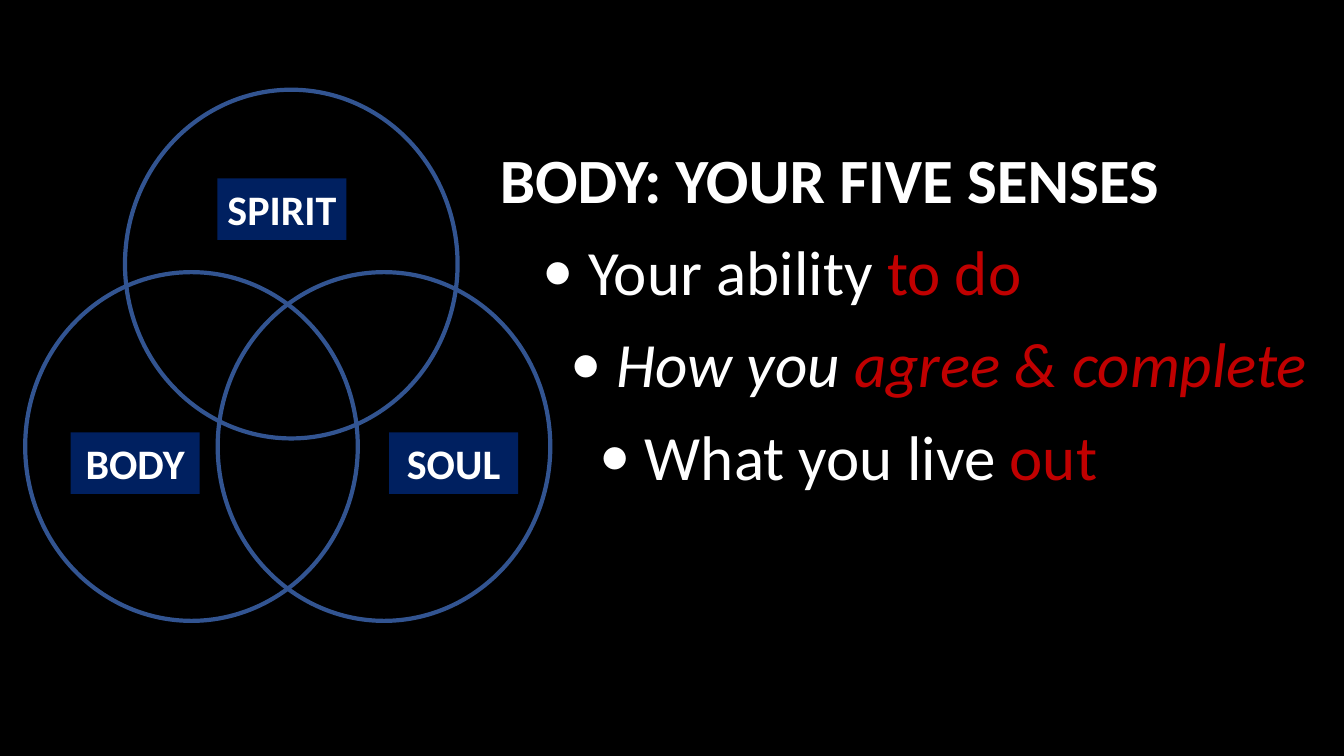
from dataclasses import dataclass

from lxml import etree
from pptx import Presentation
from pptx.dml.color import RGBColor
from pptx.enum.shapes import MSO_SHAPE
from pptx.enum.text import MSO_ANCHOR, PP_ALIGN
from pptx.oxml.ns import qn
from pptx.slide import Slide
from pptx.text.text import _Paragraph
from pptx.util import Pt

OVAL = MSO_SHAPE.OVAL
RECTANGLE = MSO_SHAPE.RECTANGLE
CENTER = PP_ALIGN.CENTER
MIDDLE = MSO_ANCHOR.MIDDLE

BLACK = RGBColor(0x00, 0x00, 0x00)
WHITE = RGBColor(0xFF, 0xFF, 0xFF)
RED = RGBColor(0xC0, 0x00, 0x00)
RING_BLUE = RGBColor(0x32, 0x54, 0x91)
NAVY = RGBColor(0x00, 0x20, 0x60)

FONT = "Calibri"
HEADING = "BODY: YOUR FIVE SENSES"
RING_WIDTH, RING_HEIGHT = 237.6, 249.1
LABEL_WIDTH, LABEL_HEIGHT = 92.2, 43.9
FIRST_INDENT, INDENT_STEP, HANGING = 63, 20.35, 32.6


@dataclass
class Position:
    left: float
    top: float


@dataclass
class Label:
    text: str
    left: float
    top: float


@dataclass
class Point:
    plain: str
    accent: str
    italic: bool = False


RINGS = [Position(18, 194.4), Position(155.5, 194.4), Position(89.3, 64.1)]
LABELS = [
    Label("SOUL", 277.9, 308.9),
    Label("SPIRIT", 155.3, 127.4),
    Label("BODY", 50.4, 308.9),
]
POINTS = [
    Point("Your ability ", "to do"),
    Point("How you ", "agree & complete", italic=True),
    Point("What you live ", "out"),
]


def style(para: _Paragraph, size: float, bold: bool = False) -> None:
    para.font.name = FONT
    para.font.size = Pt(size)
    para.font.bold = bold
    para.font.color.rgb = WHITE


def add_bullet(para: _Paragraph, indent: float) -> None:
    properties = para._p.get_or_add_pPr()
    properties.set("marL", str(Pt(indent)))
    properties.set("indent", str(-Pt(HANGING)))
    colour = etree.Element(qn("a:buClr"))
    etree.SubElement(colour, qn("a:srgbClr"), val=str(WHITE))
    font = etree.Element(qn("a:buFont"), typeface=FONT)
    char = etree.Element(qn("a:buChar"), char="•")
    # Bullet settings come before the default run properties
    for element in (colour, font, char):
        properties.find(qn("a:defRPr")).addprevious(element)


def add_ring(page: Slide, ring: Position) -> None:
    circle = page.shapes.add_shape(
        OVAL, Pt(ring.left), Pt(ring.top), Pt(RING_WIDTH), Pt(RING_HEIGHT))
    circle.shadow.inherit = False
    circle.fill.background()
    circle.line.color.rgb = RING_BLUE
    circle.line.width = Pt(3)


def add_label(page: Slide, label: Label) -> None:
    box = page.shapes.add_shape(
        RECTANGLE, Pt(label.left), Pt(label.top), Pt(LABEL_WIDTH), Pt(LABEL_HEIGHT))
    box.shadow.inherit = False
    box.fill.solid()
    box.fill.fore_color.rgb = NAVY
    box.line.fill.background()
    box.text_frame.word_wrap = False
    box.text_frame.vertical_anchor = MIDDLE
    para = box.text_frame.paragraphs[0]
    para.text = label.text
    para.alignment = CENTER
    style(para, 30, bold=True)


def add_message(page: Slide) -> None:
    box = page.shapes.add_textbox(Pt(349.9), Pt(96.5), Pt(610), Pt(370.8))
    frame = box.text_frame
    frame.word_wrap = True
    heading = frame.paragraphs[0]
    heading.text = HEADING
    heading.space_after = Pt(12)
    style(heading, 45, bold=True)

    # Each point steps further to the right
    for level, point in enumerate(POINTS):
        para = frame.add_paragraph()
        para.space_after = Pt(12)
        style(para, 45)
        para.font.italic = point.italic
        add_bullet(para, FIRST_INDENT + level * INDENT_STEP)
        para.add_run().text = point.plain
        span = para.add_run()
        span.text = point.accent
        span.font.color.rgb = RED


def main() -> None:
    deck = Presentation()
    deck.slide_width, deck.slide_height = Pt(960), Pt(540)
    page = deck.slides.add_slide(deck.slide_layouts[6])
    page.background.fill.solid()
    page.background.fill.fore_color.rgb = BLACK

    # Message on the right
    add_message(page)

    # Overlapping rings and their labels
    for ring in RINGS:
        add_ring(page, ring)
    for label in LABELS:
        add_label(page, label)

    deck.save("out.pptx")


if __name__ == "__main__":
    main()
